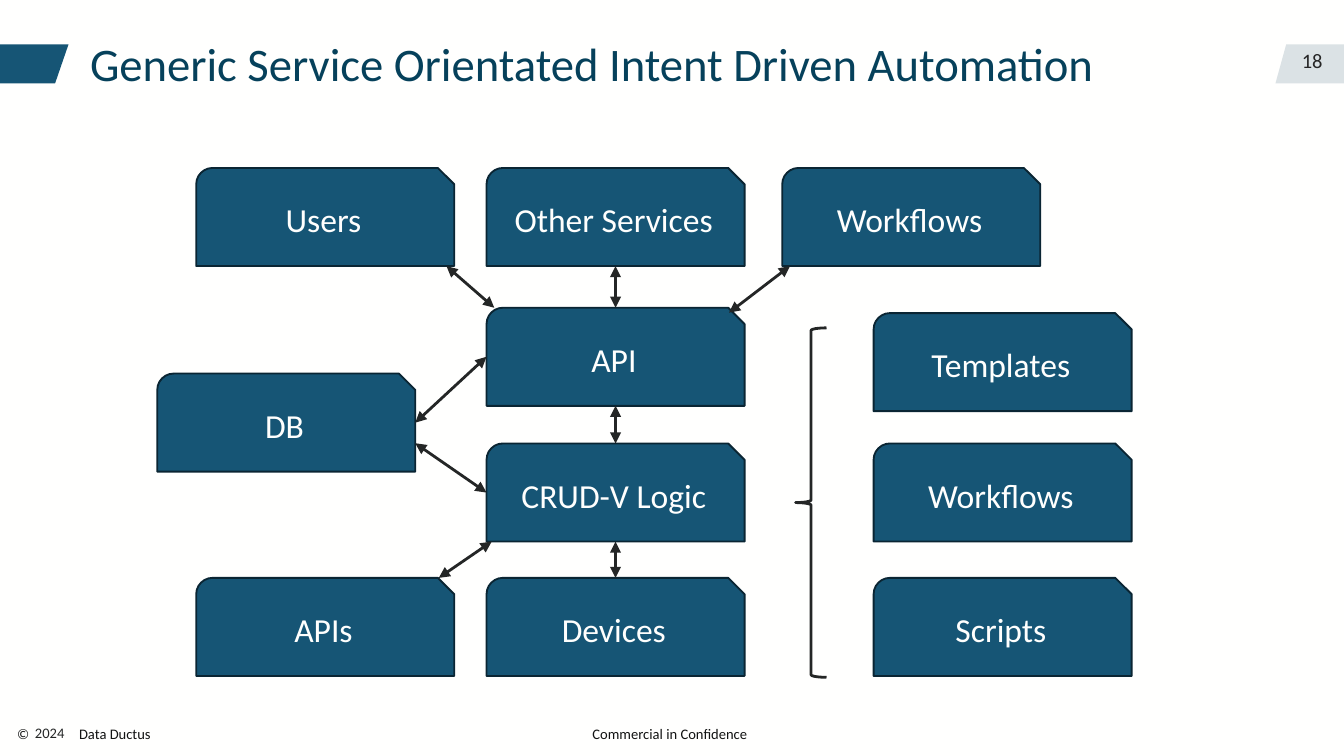
"""Build the slide on generic service orientated intent driven automation."""
from lxml.etree import SubElement
from pptx import Presentation
from pptx.dml.color import RGBColor
from pptx.enum.shapes import MSO_CONNECTOR as Connector, MSO_SHAPE as Shape
from pptx.enum.text import MSO_ANCHOR as Anchor, PP_ALIGN as Align
from pptx.oxml.ns import qn
from pptx.util import Inches, Pt

BLUE = RGBColor(0x16, 0x55, 0x75)
OUTLINE = RGBColor(0x0A, 0x25, 0x33)
TITLE = RGBColor(0x06, 0x41, 0x5B)
PALE = RGBColor(0xDB, 0xE2, 0xE5)
INK = RGBColor(0x24, 0x26, 0x26)
NUMBER = RGBColor(0x26, 0x26, 0x26)
FOOTER = RGBColor(0x12, 0x13, 0x13)
WHITE = RGBColor(0xFF, 0xFF, 0xFE)
FONT = "Calibri"

SLIDE_WIDTH = Inches(10)
SLIDE_HEIGHT = SLIDE_WIDTH * 9 // 16
BOX_WIDTH, BOX_HEIGHT = 1.92, 0.73
COLUMNS = {"database": 1.17, "left": 1.46, "centre": 3.62, "right": 5.82, "tools": 6.5}
ROWS = {"callers": 1.25, "api": 2.29, "templates": 2.33, "database": 2.78,
        "logic": 3.3, "targets": 4.3}

BOXES = {
    "users": ("Users", "left", "callers"),
    "services": ("Other Services", "centre", "callers"),
    "workflows": ("Workflows", "right", "callers"),
    "api": ("API", "centre", "api"),
    "database": ("DB", "database", "database"),
    "logic": ("CRUD-V Logic", "centre", "logic"),
    "apis": ("APIs", "left", "targets"),
    "devices": ("Devices", "centre", "targets"),
    "templates": ("Templates", "tools", "templates"),
    "tool workflows": ("Workflows", "tools", "logic"),
    "scripts": ("Scripts", "tools", "targets"),
}

TOP, BOTTOM, LEFT, RIGHT = (0.5, 0), (0.5, 1), (0, 0.5), (1, 0.5)
ARROWS = [
    ("api", (0.03, 0), "users", (0.97, 1)),
    ("api", TOP, "services", BOTTOM),
    ("api", (0.94, 0.05), "workflows", (0.03, 1)),
    ("database", RIGHT, "api", LEFT),
    ("logic", LEFT, "database", (1, 0.71)),
    ("logic", TOP, "api", BOTTOM),
    ("logic", (0.02, 1), "apis", (0.94, 0)),
    ("devices", TOP, "logic", BOTTOM),
]

TABS = [
    (BLUE, [(0, 0.33), (0.51, 0.33), (0.41, 0.62), (0, 0.62)]),
    (PALE, [(9.57, 0.33), (10.01, 0.33), (10.01, 0.62), (9.49, 0.62)]),
]

INSETS, NO_INSETS, NO_SIDES = (0.1, 0.05), (0, 0), (0, 0.05)
TEXTS = [
    ("2024", (0.26, 5.34, 0.25, 0.22), NO_SIDES, Anchor.MIDDLE, Align.LEFT, 7.8, INK),
    ("Commercial in Confidence", (4.31, 5.33, 1.38, 0.26), INSETS, Anchor.MIDDLE,
     Align.LEFT, 7.8, FOOTER),
    ("Generic Service Orientated Intent Driven Automation", (0.67, 0.26, 8.65, 0.46),
     NO_INSETS, Anchor.TOP, Align.LEFT, 25, TITLE),
    ("©\tData Ductus", (0.03, 5.33, 1.35, 0.26), INSETS, Anchor.MIDDLE,
     Align.LEFT, 7.8, FOOTER),
    ("18", (9.04, 0.33, 0.9, 0.24), INSETS, Anchor.MIDDLE, Align.RIGHT, 11, NUMBER),
]
COPYRIGHT_TAB = 0.46


def write(frame, text, size, color, align):
    frame.text = text
    para = frame.paragraphs[0]
    para.alignment = align
    if "\t" in text:
        stops = SubElement(para._p.get_or_add_pPr(), qn("a:tabLst"))
        SubElement(stops, qn("a:tab"), pos=str(Inches(COPYRIGHT_TAB)), algn="l")
    for span in para.runs:
        span.font.name = FONT
        span.font.size = Pt(size)
        span.font.color.rgb = color


def add_tab(page, color, points):
    corners = [(Inches(x), Inches(y)) for x, y in points]
    builder = page.shapes.build_freeform(*corners[0])
    builder.add_line_segments(corners[1:], close=True)
    tab = builder.convert_to_shape()
    tab.shadow.inherit = False
    tab.fill.solid()
    tab.fill.fore_color.rgb = color
    tab.line.fill.background()


def add_text(page, text, place, insets, anchor, align, size, color):
    frame = page.shapes.add_textbox(*map(Inches, place)).text_frame
    frame.word_wrap = True
    frame.vertical_anchor = anchor
    frame.margin_left = frame.margin_right = Inches(insets[0])
    frame.margin_top = frame.margin_bottom = Inches(insets[1])
    write(frame, text, size, color, align)


def add_box(page, label, column, row):
    place = (COLUMNS[column], ROWS[row], BOX_WIDTH, BOX_HEIGHT)
    box = page.shapes.add_shape(Shape.SNIP_ROUND_RECTANGLE, *map(Inches, place))
    box.shadow.inherit = False
    box.fill.solid()
    box.fill.fore_color.rgb = BLUE
    box.line.color.rgb = OUTLINE
    box.line.width = Pt(1)
    box.text_frame.vertical_anchor = Anchor.MIDDLE
    write(box.text_frame, label, 18, WHITE, Align.CENTER)


def point_on(name, share):
    _, column, row = BOXES[name]
    return (Inches(COLUMNS[column] + share[0] * BOX_WIDTH),
            Inches(ROWS[row] + share[1] * BOX_HEIGHT))


def add_arrow(page, start, start_share, end, end_share):
    arrow = page.shapes.add_connector(
        Connector.STRAIGHT, *point_on(start, start_share), *point_on(end, end_share))
    arrow.line.color.rgb = INK
    arrow.line.width = Pt(1.5)
    properties = arrow._element.spPr
    for tip in ("a:headEnd", "a:tailEnd"):
        SubElement(properties.find(qn("a:ln")), qn(tip), type="triangle")
    SubElement(properties, qn("a:effectLst"))


def add_brace(page):
    brace = page.shapes.add_shape(
        Shape.LEFT_BRACE, *map(Inches, (5.92, 2.44, 0.23, 2.6)))
    brace.shadow.inherit = False
    brace.fill.background()
    brace.line.color.rgb = INK
    brace.line.width = Pt(1.5)


def main():
    deck = Presentation()
    deck.slide_width, deck.slide_height = SLIDE_WIDTH, SLIDE_HEIGHT
    page = deck.slides.add_slide(deck.slide_layouts[6])
    page.background.fill.solid()
    page.background.fill.fore_color.rgb = WHITE
    for tab in TABS:
        add_tab(page, *tab)
    for text in TEXTS:
        add_text(page, *text)
    for box in BOXES.values():
        add_box(page, *box)
    add_brace(page)
    for arrow in ARROWS:
        add_arrow(page, *arrow)
    deck.save("out.pptx")


if __name__ == "__main__":
    main()
